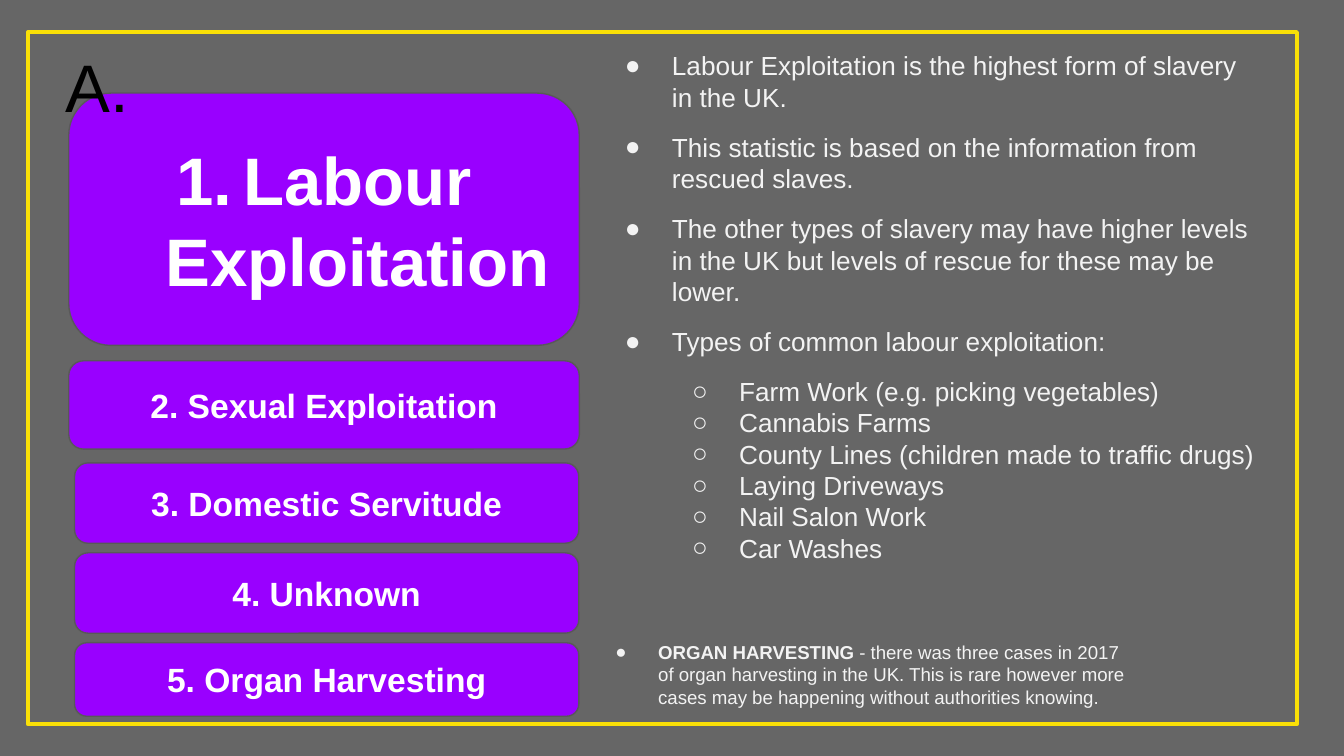
from dataclasses import dataclass

from lxml import etree
from pptx import Presentation
from pptx.dml.color import RGBColor
from pptx.enum.shapes import MSO_SHAPE
from pptx.enum.text import MSO_ANCHOR, PP_ALIGN
from pptx.oxml.ns import qn
from pptx.util import Cm, Pt

RECT = MSO_SHAPE.RECTANGLE
ROUND = MSO_SHAPE.ROUNDED_RECTANGLE
MIDDLE = MSO_ANCHOR.MIDDLE
TOP = MSO_ANCHOR.TOP
CENTER = PP_ALIGN.CENTER
LEFT = PP_ALIGN.LEFT

GREY = RGBColor(0x66, 0x66, 0x66)
DARK_GREY = RGBColor(0x59, 0x59, 0x59)
YELLOW = RGBColor(0xFA, 0xE0, 0x07)
PURPLE = RGBColor(0x99, 0x00, 0xFF)
WHITE = RGBColor(0xFF, 0xFF, 0xFF)
PALE = RGBColor(0xF3, 0xF3, 0xF3)
BLACK = RGBColor(0x00, 0x00, 0x00)

FONT = "Arial"
INSET = Cm(0.25)


@dataclass
class Box:
    left: float
    top: float
    width: float
    height: float

    def lengths(self) -> tuple:
        return Cm(self.left), Cm(self.top), Cm(self.width), Cm(self.height)


@dataclass
class Category:
    text: str
    box: Box
    size: int = 18
    numbered: bool = False


@dataclass
class Bullet:
    text: str
    level: int = 0
    before: int = 10


CATEGORIES = [
    Category("Labour Exploitation", Box(1.3, 1.76, 9.65, 4.77), 36, True),
    Category("2. Sexual Exploitation", Box(1.3, 6.82, 9.65, 1.67)),
    Category("3. Domestic Servitude", Box(1.41, 8.75, 9.53, 1.52)),
    Category("4. Unknown", Box(1.41, 10.45, 9.53, 1.52)),
    Category("5. Organ Harvesting", Box(1.41, 12.15, 9.53, 1.39)),
]

FACTS = [
    Bullet("Labour Exploitation is the highest form of slavery in the UK."),
    Bullet("This statistic is based on the information from rescued slaves."),
    Bullet("The other types of slavery may have higher levels in the UK "
           "but levels of rescue for these may be lower."),
    Bullet("Types of common labour exploitation:"),
    Bullet("Farm Work (e.g. picking vegetables)", 1),
    Bullet("Cannabis Farms", 1, 0),
    Bullet("County Lines (children made to traffic drugs)", 1, 0),
    Bullet("Laying Driveways", 1, 0),
    Bullet("Nail Salon Work", 1, 0),
    Bullet("Car Washes", 1, 0),
]


def add_panel(s, kind, box: Box, fill=None, line=None, width: float = 0.75):
    sp = s.shapes.add_shape(kind, *box.lengths())
    sp.shadow.inherit = False
    if fill is None:
        sp.fill.background()
    else:
        sp.fill.solid()
        sp.fill.fore_color.rgb = fill
    if line is None:
        sp.line.fill.background()
    else:
        sp.line.color.rgb = line
        sp.line.width = Pt(width)
    return sp


def setup_frame(sp, anchor=TOP):
    tf = sp.text_frame
    tf.word_wrap = True
    tf.vertical_anchor = anchor
    tf.margin_left = tf.margin_right = INSET
    tf.margin_top = tf.margin_bottom = INSET
    return tf


def add_text_box(s, box: Box):
    return setup_frame(s.shapes.add_textbox(*box.lengths()))


def add_run(p, text: str, *, size: int, color: RGBColor, bold: bool = False) -> None:
    r = p.add_run()
    r.text = text
    r.font.name = FONT
    r.font.size = Pt(size)
    r.font.bold = bold
    r.font.color.rgb = color


def set_bullet(p, color: RGBColor, *, left: float, hang: float, char: str = "") -> None:
    pPr = p._p.get_or_add_pPr()
    pPr.set("marL", str(Cm(left)))
    pPr.set("indent", str(-Cm(hang)))
    clr = etree.SubElement(pPr, qn("a:buClr"))
    etree.SubElement(clr, qn("a:srgbClr"), val=str(color))
    etree.SubElement(pPr, qn("a:buFont"), typeface=FONT)
    if char:
        etree.SubElement(pPr, qn("a:buChar"), char=char)
    else:
        etree.SubElement(pPr, qn("a:buAutoNum"), type="arabicPeriod")


def add_category(s, category: Category) -> None:
    sp = add_panel(s, ROUND, category.box, PURPLE, DARK_GREY)
    p = setup_frame(sp, MIDDLE).paragraphs[0]
    p.alignment = CENTER
    if category.numbered:
        set_bullet(p, WHITE, left=1.27, hang=1.27)
    add_run(p, category.text, size=category.size, color=WHITE, bold=True)


def add_facts(s, box: Box, facts: list[Bullet]) -> None:
    tf = add_text_box(s, box)
    for i, fact in enumerate(facts):
        p = tf.add_paragraph() if i else tf.paragraphs[0]
        p.alignment = LEFT
        p.level = fact.level
        p.space_before = Pt(fact.before)
        set_bullet(p, PALE, left=1.27 * (fact.level + 1), hang=0.89,
                   char="●○"[fact.level])
        add_run(p, fact.text, size=14, color=PALE)


def add_note(s, box: Box, heading: str, text: str) -> None:
    p = add_text_box(s, box).paragraphs[0]
    set_bullet(p, PALE, left=1.27, hang=0.81, char="●")
    add_run(p, heading, size=10, color=PALE, bold=True)
    add_run(p, text, size=10, color=PALE)


def main() -> None:
    prs = Presentation()
    prs.slide_width, prs.slide_height = Cm(25.4), Cm(14.29)
    s = prs.slides.add_slide(prs.slide_layouts[6])

    add_panel(s, RECT, Box(-0.05, 0, 25.45, 14.29), GREY)
    add_panel(s, RECT, Box(0.53, 0.61, 23.98, 13.08), line=YELLOW, width=2.25)
    add_facts(s, Box(11.18, 0.69, 12.78, 12.22), FACTS)
    add_note(s, Box(10.92, 11.86, 10.59, 1.83), "ORGAN HARVESTING",
             " - there was three cases in 2017 of organ harvesting in the UK. "
             "This is rare however more cases may be happening without "
             "authorities knowing.")
    for category in CATEGORIES:
        add_category(s, category)
    p = add_text_box(s, Box(0.99, 0.61, 2.44, 2.01)).paragraphs[0]
    add_run(p, "A.", size=36, color=BLACK)

    prs.save("out.pptx")


if __name__ == "__main__":
    main()
